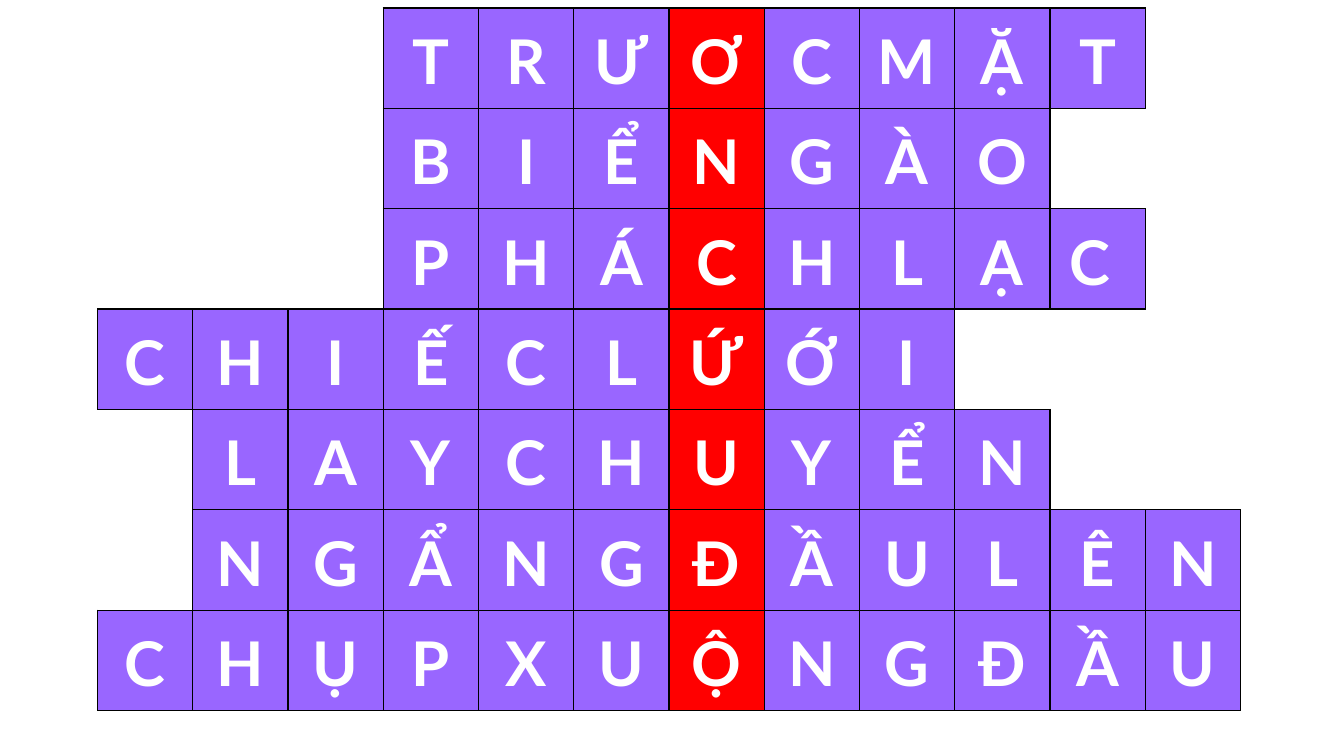
import pptx
import pptx.dml.color
import pptx.enum.text
import pptx.oxml
import pptx.oxml.ns
import pptx.util
from pptx.util import Cm

PURPLE = pptx.dml.color.RGBColor(0x99, 0x66, 0xFF)
RED = pptx.dml.color.RGBColor(0xFF, 0x00, 0x00)
WHITE = pptx.dml.color.RGBColor(0xFF, 0xFF, 0xFF)
BLACK = pptx.dml.color.RGBColor(0x00, 0x00, 0x00)

ANSWERS = [
    (3, "T|R|Ư|Ơ|C|M|Ặ|T"),
    (3, "B|I|Ể|N|G|À|O"),
    (3, "P|H|Á|C|H|L|Ạ|C "),
    (0, "C|H|I|Ế|C|L|Ứ|Ớ|I"),
    (1, "L|A|Y|C|H|U|Y|Ể|N"),
    (1, "N|G|Ẩ|N|G|Đ|Ầ|U|L|Ê|N"),
    (0, "C|H|Ụ|P|X|U|Ộ|N|G|Đ|Ầ|U"),
]
COLUMN_COUNT = 12
KEY_COLUMN = 6
COLUMN_WIDTH = Cm(2.4)
ROW_HEIGHT = Cm(2.53)
SIDES = [("lnL", 0, -1), ("lnR", 0, 1), ("lnT", -1, 0), ("lnB", 1, 0)]

LETTERS = {
    (row, start + offset): letter
    for row, (start, answer) in enumerate(ANSWERS)
    for offset, letter in enumerate(answer.split("|"))
}


def set_borders(cell, row, column):
    properties = cell._tc.get_or_add_tcPr()
    for index, (tag, row_step, column_step) in enumerate(SIDES):
        neighbour = (row + row_step, column + column_step)
        if (row, column) in LETTERS or neighbour in LETTERS:
            fill = f'<a:solidFill><a:srgbClr val="{BLACK}"/></a:solidFill>'
        else:
            fill = "<a:noFill/>"
        border = pptx.oxml.parse_xml(
            f'<a:{tag} {pptx.oxml.ns.nsdecls("a")} w="12700">{fill}</a:{tag}>'
        )
        properties.insert(index, border)


def write_letter(cell, letter):
    cell.text = letter
    cell.vertical_anchor = pptx.enum.text.MSO_ANCHOR.MIDDLE
    cell.margin_left = cell.margin_right = Cm(0.18)
    cell.margin_top = cell.margin_bottom = 0
    paragraph = cell.text_frame.paragraphs[0]
    paragraph.alignment = pptx.enum.text.PP_ALIGN.CENTER
    paragraph.line_spacing = 1.07
    paragraph.space_after = pptx.util.Pt(8)
    paragraph.font.name = "Lato"
    paragraph.font.size = pptx.util.Pt(44)
    paragraph.font.bold = True
    paragraph.font.color.rgb = WHITE


def main():
    presentation = pptx.Presentation()
    presentation.slide_width = Cm(33.87)
    presentation.slide_height = Cm(19.05)
    slide = presentation.slides.add_slide(presentation.slide_layouts[6])

    table = slide.shapes.add_table(
        len(ANSWERS), COLUMN_COUNT, Cm(2.46), Cm(0.2),
        COLUMN_WIDTH * COLUMN_COUNT, ROW_HEIGHT * len(ANSWERS),
    ).table
    table.first_row = False
    table.horz_banding = False

    for row in range(len(ANSWERS)):
        for column in range(COLUMN_COUNT):
            cell = table.cell(row, column)
            cell.fill.solid()
            if (row, column) in LETTERS:
                cell.fill.fore_color.rgb = RED if column == KEY_COLUMN else PURPLE
                write_letter(cell, LETTERS[row, column])
            else:
                cell.fill.fore_color.rgb = WHITE
            set_borders(cell, row, column)

    presentation.save("out.pptx")


if __name__ == "__main__":
    main()
